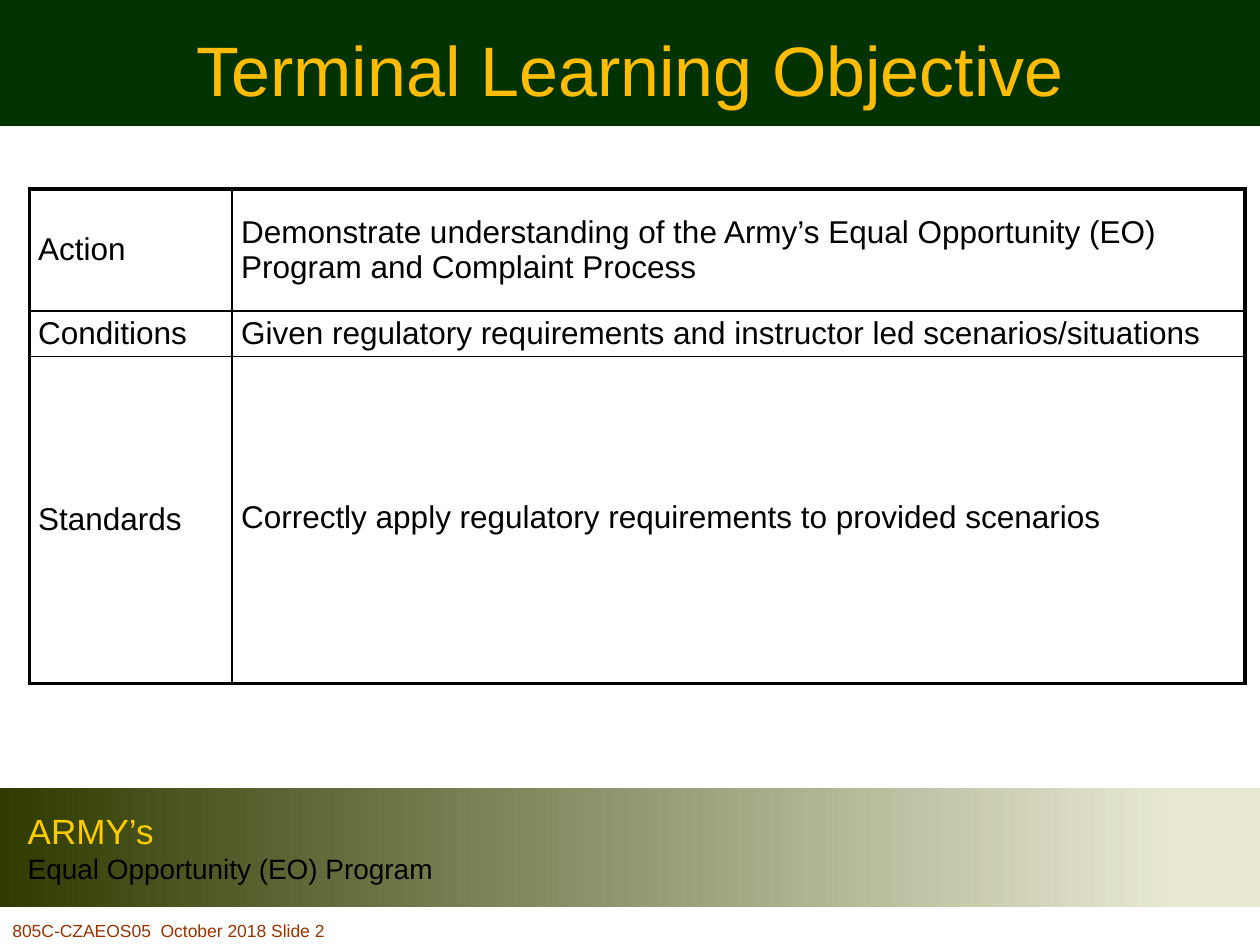
from lxml import etree
from pptx import Presentation
from pptx import util as u
from pptx.dml.color import RGBColor
from pptx.enum import shapes, text
from pptx.oxml.ns import qn

HUE = {"pine": "003300", "olive": "2F3B01", "sand": "E8E8D2", "gold": "FFBC01",
       "sun": "FFCC00", "rust": "993300", "black": "000000"}
TITLE = "Terminal Learning Objective"
ROWS = [
    ("Action", "Demonstrate understanding of the Army’s Equal Opportunity (EO) "
               "Program and Complaint Process"),
    ("Conditions", "Given regulatory requirements and instructor led scenarios/situations"),
    ("Standards", "Correctly apply regulatory requirements to provided scenarios"),
]
BAND = [("ARMY’s", 20, "sun"), ("Equal Opportunity (EO) Program", 16, "black")]
FOOT = "805C-CZAEOS05  October 2018 Slide 2"

# Lengths in centimetres
WIDE, HIGH = 25.4, 19.05
COLS = [4.09, 20.42]
TALL = [2.46, 0.86, 6.6]
PAD = (0.18, 0.1, 0.18, 0.1)
THICK, THIN = 2.25, 1


def rgb(name):
    return RGBColor.from_string(HUE[name])


def write(frame, words, size=18, hue="black", align=text.PP_ALIGN.LEFT,
          anchor=text.MSO_ANCHOR.MIDDLE, more=False):
    """Put words in the first paragraph, or in an added one if more is set."""
    frame.word_wrap = True
    frame.vertical_anchor = anchor
    para = frame.add_paragraph() if more else frame.paragraphs[0]
    para.alignment = align
    run = para.add_run()
    run.text = words
    run.font.name = "Arial"
    run.font.size = u.Pt(size)
    run.font.color.rgb = rgb(hue)


def place(shape, *box):
    shape.left, shape.top, shape.width, shape.height = map(u.Cm, box)


def bar(slide, top, high):
    shape = slide.shapes.add_shape(shapes.MSO_SHAPE.RECTANGLE, 0, u.Cm(top),
                                   u.Cm(WIDE), u.Cm(high))
    shape.shadow.inherit = False
    shape.line.fill.background()
    return shape


def edge(cell, side, width):
    props = cell._tc.get_or_add_tcPr()
    line = etree.SubElement(props, qn("a:ln" + side), w=str(u.Pt(width)))
    fill = etree.SubElement(line, qn("a:solidFill"))
    etree.SubElement(fill, qn("a:srgbClr"), val=HUE["black"])


def grid(slide):
    frame = slide.shapes.add_table(len(ROWS), len(COLS), u.Cm(0.59), u.Cm(3.81),
                                   u.Cm(sum(COLS)), u.Cm(sum(TALL)))
    table = frame.table
    table.first_row = table.horz_banding = False
    for col, wide in zip(table.columns, COLS):
        col.width = u.Cm(wide)
    for r, (row, high) in enumerate(zip(ROWS, TALL)):
        table.rows[r].height = u.Cm(high)
        for c, words in enumerate(row):
            cell = table.cell(r, c)
            (cell.margin_left, cell.margin_top,
             cell.margin_right, cell.margin_bottom) = map(u.Cm, PAD)
            write(cell.text_frame, words)
            cell.vertical_anchor = text.MSO_ANCHOR.MIDDLE
            outer = {"L": c == 0, "R": c == len(COLS) - 1,
                     "T": r == 0, "B": r == len(ROWS) - 1}
            for side, out in outer.items():
                edge(cell, side, THICK if out else THIN)
            cell.fill.background()
    table.cell(len(ROWS) - 1, 1).margin_top = 0


def main():
    deck = Presentation()
    deck.slide_width, deck.slide_height = u.Cm(WIDE), u.Cm(HIGH)
    slide = deck.slides.add_slide(deck.slide_layouts[5])

    head = bar(slide, 0, 2.54)
    head.fill.solid()
    head.fill.fore_color.rgb = rgb("pine")

    band = bar(slide, 15.88, 2.41)
    band.fill.gradient()
    band.fill.gradient_angle = 0
    for stop, spot, hue in zip(band.fill.gradient_stops, (0, 0.93), ("olive", "sand")):
        stop.position = spot
        stop.color.rgb = rgb(hue)
    band.text_frame.margin_left = u.Cm(0.56)
    for i, (words, size, hue) in enumerate(BAND):
        write(band.text_frame, words, size=size, hue=hue, more=i > 0)

    title = slide.shapes.title
    place(title, 1.9, -0.2, 21.6, 3.18)
    write(title.text_frame, TITLE, size=40, hue="gold", align=text.PP_ALIGN.CENTER)
    title.element.getparent().append(title.element)  # bring in front of the bar

    grid(slide)

    foot = slide.shapes.add_textbox(0, 0, 0, 0)
    place(foot, 0, 18.42, 9.91, 0.63)
    write(foot.text_frame, FOOT, size=10, hue="rust", anchor=text.MSO_ANCHOR.TOP)

    deck.save("out.pptx")


if __name__ == "__main__":
    main()
